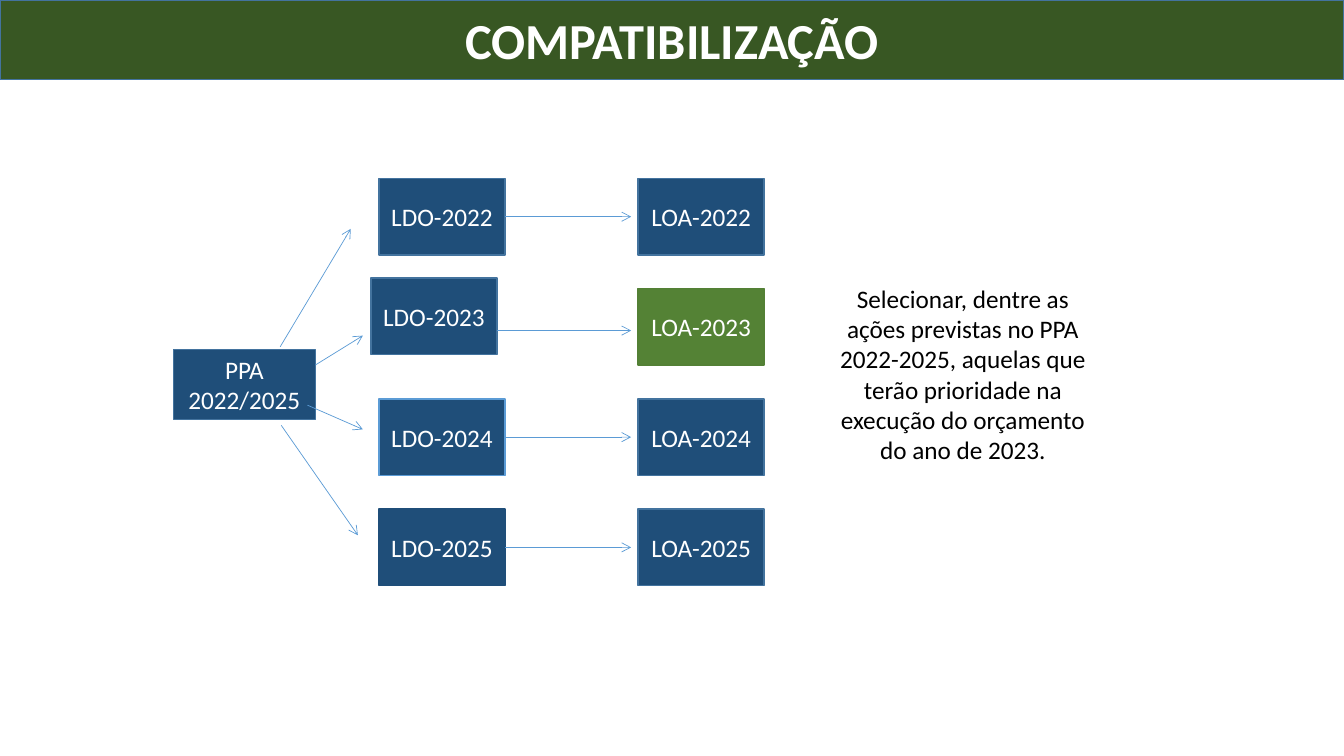
from dataclasses import dataclass

import lxml.etree
import pptx
import pptx.dml.color
import pptx.enum.shapes
import pptx.enum.text
import pptx.oxml.ns
import pptx.util


@dataclass(frozen=True)
class Theme:
    font: str = "Calibri"
    title_size: int = 36
    body_size: int = 18
    box_line: float = 1
    arrow_line: float = 0.5
    banner: str = "385723"
    navy: str = "1F4E79"
    edge: str = "43739E"
    sky: str = "5B9BD5"
    green: str = "548235"
    green_edge: str = "538035"
    white: str = "FFFFFF"
    black: str = "000000"


@dataclass(frozen=True)
class Box:
    text: str
    left: float
    top: float
    width: float
    height: float
    fill: str
    line: str


@dataclass(frozen=True)
class Arrow:
    x1: float
    y1: float
    x2: float
    y2: float


@dataclass(frozen=True)
class Year:
    year: int
    ldo_line: str
    loa_fill: str
    loa_line: str
    ldo_shift: tuple[float, float] = (0, 0)
    link_y: float | None = None


THEME = Theme()
SLIDE_W = pptx.util.Inches(13.33)
SLIDE_H = pptx.util.Inches(7.5)

LDO_X, COL_PITCH, BOX_W = 28.2, 19.28, 9.38
ROW_Y, ROW_PITCH, BOX_H = 23.6, 14.58, 10.13
LINK_END = 46.96

BANNER = Box("COMPATIBILIZAÇÃO", 0, 0, 100, 10.53, THEME.banner, THEME.edge)
PPA = Box("PPA\n2022/2025", 12.9, 46.27, 10.58, 9.2, THEME.navy, THEME.edge)
YEARS = [
    Year(2022, THEME.edge, THEME.navy, THEME.edge),
    Year(2023, THEME.edge, THEME.green, THEME.green_edge, (-0.6, -1.38), 43.73),
    Year(2024, THEME.sky, THEME.navy, THEME.edge),
    Year(2025, THEME.navy, THEME.navy, THEME.edge),
]
PPA_ARROWS = [
    Arrow(20.85, 45.87, 26.1, 30.27),
    Arrow(23.48, 48.27, 27, 44.4),
    Arrow(22.88, 53.6, 27, 56.8),
    Arrow(20.93, 56.27, 26.63, 70.8),
]
NOTE = (
    "Selecionar, dentre as ações previstas no PPA 2022-2025, aquelas que "
    "terão prioridade na execução do orçamento do ano de 2023."
)


def across(share: float) -> int:
    return round(SLIDE_W * share / 100)


def down(share: float) -> int:
    return round(SLIDE_H * share / 100)


def rgb(color: str) -> pptx.dml.color.RGBColor:
    return pptx.dml.color.RGBColor.from_string(color)


def write(sp, text: str, size: int, color: str, bold: bool = False) -> None:
    tf = sp.text_frame
    tf.word_wrap = True
    tf.text = text
    for p in tf.paragraphs:
        p.alignment = pptx.enum.text.PP_ALIGN.CENTER
        p.font.name = THEME.font
        p.font.size = pptx.util.Pt(size)
        p.font.bold = bold
        p.font.color.rgb = rgb(color)


def dress(sp, box: Box, size: int, bold: bool = False) -> None:
    sp.fill.solid()
    sp.fill.fore_color.rgb = rgb(box.fill)
    sp.line.color.rgb = rgb(box.line)
    sp.line.width = pptx.util.Pt(THEME.box_line)
    write(sp, box.text, size, THEME.white, bold)
    sp.text_frame.vertical_anchor = pptx.enum.text.MSO_ANCHOR.MIDDLE


def add_banner(s, box: Box) -> None:
    sp = s.shapes.title
    sp.left, sp.top = across(box.left), down(box.top)
    sp.width, sp.height = across(box.width), down(box.height)
    dress(sp, box, THEME.title_size, True)
    sp.text_frame.auto_size = pptx.enum.text.MSO_AUTO_SIZE.NONE


def add_box(s, box: Box):
    sp = s.shapes.add_shape(
        pptx.enum.shapes.MSO_SHAPE.RECTANGLE,
        across(box.left), down(box.top), across(box.width), down(box.height),
    )
    sp.shadow.inherit = False
    dress(sp, box, THEME.body_size)
    return sp


def add_arrow(s, arrow: Arrow):
    cxn = s.shapes.add_connector(
        pptx.enum.shapes.MSO_CONNECTOR.STRAIGHT,
        across(arrow.x1), down(arrow.y1), across(arrow.x2), down(arrow.y2),
    )
    cxn.line.color.rgb = rgb(THEME.sky)
    cxn.line.width = pptx.util.Pt(THEME.arrow_line)
    qn = pptx.oxml.ns.qn
    ln = cxn.line._get_or_add_ln()
    lxml.etree.SubElement(ln, qn("a:tailEnd"), type="arrow")
    lxml.etree.SubElement(ln.getparent(), qn("a:effectLst"))
    return cxn


def add_year(s, row: int, year: Year) -> None:
    top = ROW_Y + row * ROW_PITCH
    left = LDO_X + year.ldo_shift[0]
    ldo = Box(f"LDO-{year.year}", left, top + year.ldo_shift[1],
              BOX_W, BOX_H, THEME.navy, year.ldo_line)
    loa = Box(f"LOA-{year.year}", LDO_X + COL_PITCH, top,
              BOX_W, BOX_H, year.loa_fill, year.loa_line)
    sp = add_box(s, ldo)
    add_box(s, loa)
    y = top + BOX_H / 2 if year.link_y is None else year.link_y
    cxn = add_arrow(s, Arrow(left + BOX_W, y, LINK_END, y))
    if year.link_y is None:
        cxn.begin_connect(sp, 3)


def add_note(s, text: str) -> None:
    sp = s.shapes.add_textbox(across(61.29), down(36.8), across(20.7), down(25.6))
    write(sp, text, THEME.body_size, THEME.black)


def main() -> None:
    prs = pptx.Presentation()
    prs.slide_width, prs.slide_height = SLIDE_W, SLIDE_H
    s = prs.slides.add_slide(prs.slide_layouts[5])
    add_banner(s, BANNER)
    add_box(s, PPA)
    for row, year in enumerate(YEARS):
        add_year(s, row, year)
    for arrow in PPA_ARROWS:
        add_arrow(s, arrow)
    add_note(s, NOTE)
    prs.save("out.pptx")


if __name__ == "__main__":
    main()
